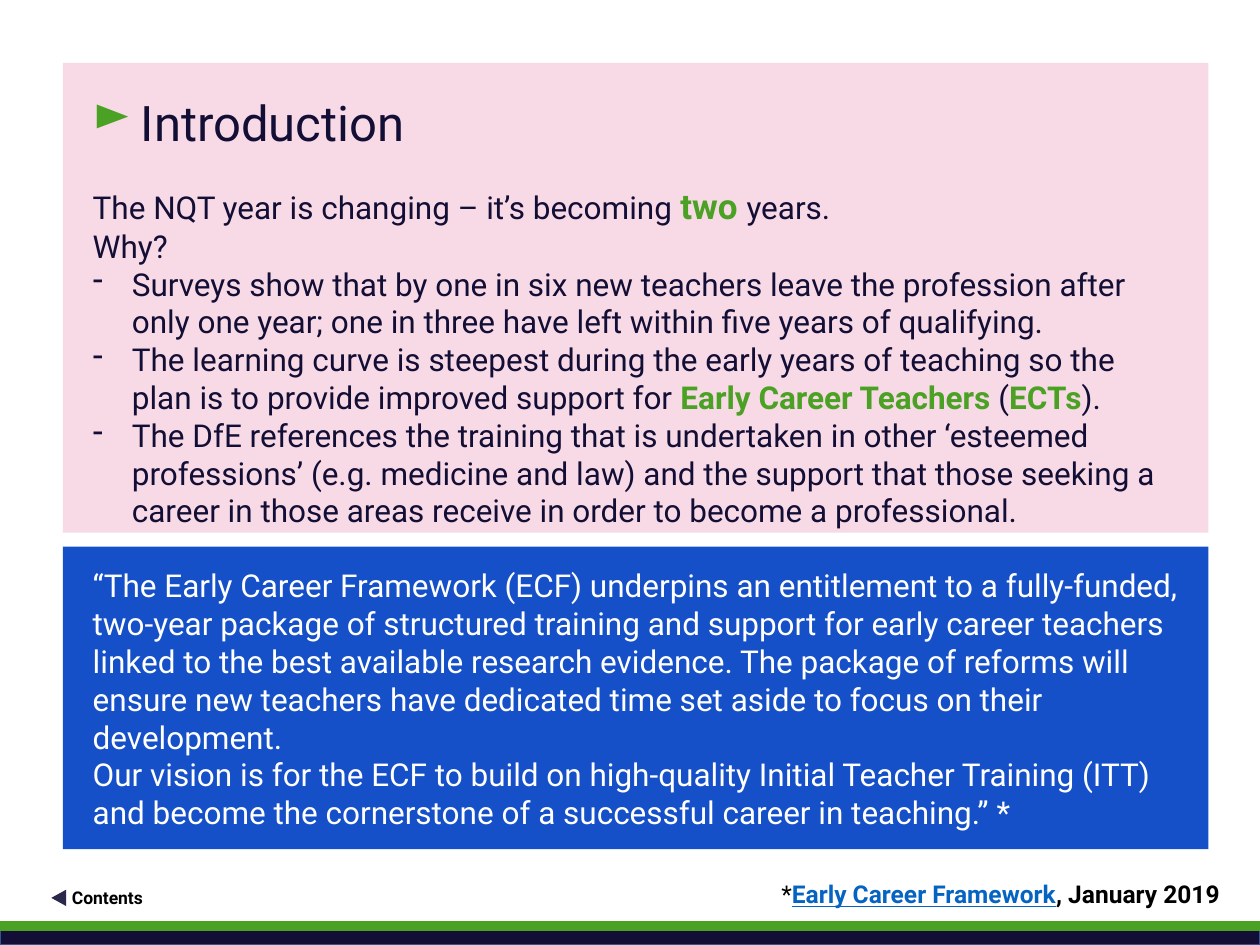
from lxml import etree
from pptx import Presentation
from pptx.dml.color import RGBColor
from pptx.enum import shapes, text
from pptx.oxml import ns
from pptx.util import Cm, Pt

NAVY = RGBColor(0x12, 0x0E, 0x35)
GREEN = RGBColor(0x4B, 0xA1, 0x24)
PINK = RGBColor(0xF8, 0xDA, 0xE6)
BLUE = RGBColor(0x15, 0x50, 0xC8)
EDGE = RGBColor(0x32, 0x54, 0x91)
ARROW = RGBColor(0x2A, 0x29, 0x4C)
LINK = RGBColor(0x05, 0x63, 0xC1)
WHITE = RGBColor(0xFF, 0xFF, 0xFF)
BLACK = RGBColor(0, 0, 0)

WIDTH, HEIGHT = 25.4, 19.05
FONT = "Roboto"

REASONS = [
    [("Surveys show that by one in six new teachers leave the profession after "
      "only one year; one in three have left within five years of qualifying.", False)],
    [("The learning curve is steepest during the early years of teaching so the "
      "plan is to provide improved support for ", False),
     ("Early Career Teachers ", True), ("(", False), ("ECTs", True), (").", False)],
    [("The DfE references the training that is undertaken in other ‘esteemed "
      "professions’ (e.g. medicine and law) and the support that those seeking a "
      "career in those areas receive in order to become a professional.", False)],
]
QUOTE = [
    "“The Early Career Framework (ECF) underpins an entitlement to a fully-funded, "
    "two-year package of structured training and support for early career teachers "
    "linked to the best available research evidence. The package of reforms will "
    "ensure new teachers have dedicated time set aside to focus on their development.",
    "Our vision is for the ECF to build on high-quality Initial Teacher Training (ITT) "
    "and become the cornerstone of a successful career in teaching.” *",
]


def add_block(slide, box, fill, edge=None, kind=shapes.MSO_SHAPE.RECTANGLE):
    block = slide.shapes.add_shape(kind, *map(Cm, box))
    block.shadow.inherit = False
    block.fill.solid()
    block.fill.fore_color.rgb = fill
    if edge is None:
        block.line.fill.background()
    else:
        block.line.color.rgb = edge
        block.line.width = Pt(1)
    return block


def set_frame(frame, left=0, top=0, right=0, bottom=0):
    frame.word_wrap = True
    frame.vertical_anchor = text.MSO_ANCHOR.TOP
    frame.margin_left, frame.margin_top = Cm(left), Cm(top)
    frame.margin_right, frame.margin_bottom = Cm(right), Cm(bottom)
    return frame


def next_paragraph(frame):
    first = frame.paragraphs[0]
    paragraph = frame.add_paragraph() if first.runs else first
    paragraph.alignment = text.PP_ALIGN.LEFT
    return paragraph


def add_words(paragraph, words, size, color, bold=False, underline=False):
    run = paragraph.add_run()
    run.text = words
    run.font.name = FONT
    run.font.size = Pt(size)
    run.font.color.rgb = color
    run.font.bold = bold
    run.font.underline = underline


def set_bullet(paragraph, mark, indent, color=None):
    props = paragraph._p.get_or_add_pPr()
    props.set("marL", str(Cm(indent)))
    props.set("indent", str(-Cm(indent)))
    if color is not None:
        tint = etree.SubElement(props, ns.qn("a:buClr"))
        etree.SubElement(tint, ns.qn("a:srgbClr")).set("val", str(color))
    etree.SubElement(props, ns.qn("a:buChar")).set("char", mark)


def introduction(slide, box):
    frame = set_frame(add_block(slide, box, PINK).text_frame, 0.6, 0.6, 0.6, 0.3)

    title = next_paragraph(frame)
    title.space_after = Pt(19)
    set_bullet(title, "►", 0.97, GREEN)
    add_words(title, "Introduction", 28, NAVY)

    change = next_paragraph(frame)
    add_words(change, "The NQT year is changing – it’s becoming ", 18, NAVY)
    add_words(change, "two ", 20, GREEN, bold=True)
    add_words(change, "years.", 18, NAVY)
    add_words(next_paragraph(frame), "Why?", 18, NAVY)

    for parts in REASONS:
        reason = next_paragraph(frame)
        set_bullet(reason, "-", 0.79)
        for words, key in parts:
            add_words(reason, words, 18, GREEN if key else NAVY, bold=key)


def quotation(slide, box):
    frame = set_frame(add_block(slide, box, BLUE).text_frame, 0.6, 0.4, 0.6, 0.4)
    for words in QUOTE:
        add_words(next_paragraph(frame), words, 18, WHITE)


def contents_button(slide, box):
    left, top, width, height = box
    arrow = add_block(slide, (left, top + 0.07, 0.33, 0.3), ARROW,
                      kind=shapes.MSO_SHAPE.ISOSCELES_TRIANGLE)
    arrow.rotation = 270
    label = slide.shapes.add_textbox(Cm(left + 0.43), Cm(top), Cm(width - 0.43), Cm(height))
    add_words(next_paragraph(set_frame(label.text_frame)), "Contents", 10, BLACK, bold=True)


def citation(slide, box):
    note = slide.shapes.add_textbox(*map(Cm, box))
    line = next_paragraph(set_frame(note.text_frame))
    line.alignment = text.PP_ALIGN.RIGHT
    add_words(line, "*", 14, BLACK)
    add_words(line, "Early Career Framework", 14, LINK, bold=True, underline=True)
    add_words(line, ", January 2019", 14, BLACK, bold=True)


def footer_bar(slide, box):
    left, top, width, height = box
    add_block(slide, box, NAVY, EDGE)
    add_block(slide, (left, top, width, height / 3), GREEN, GREEN)


def main():
    deck = Presentation()
    deck.slide_width, deck.slide_height = Cm(WIDTH), Cm(HEIGHT)
    slide = deck.slides.add_slide(deck.slide_layouts[6])
    introduction(slide, (1.27, 1.27, 23.09, 9.47))
    contents_button(slide, (1.02, 17.88, 2.56, 0.43))
    quotation(slide, (1.27, 11.02, 23.09, 6.1))
    citation(slide, (0.84, 17.73, 23.75, 0.61))
    footer_bar(slide, (0, HEIGHT - 0.46, WIDTH, 0.46))
    deck.save("out.pptx")


if __name__ == "__main__":
    main()
